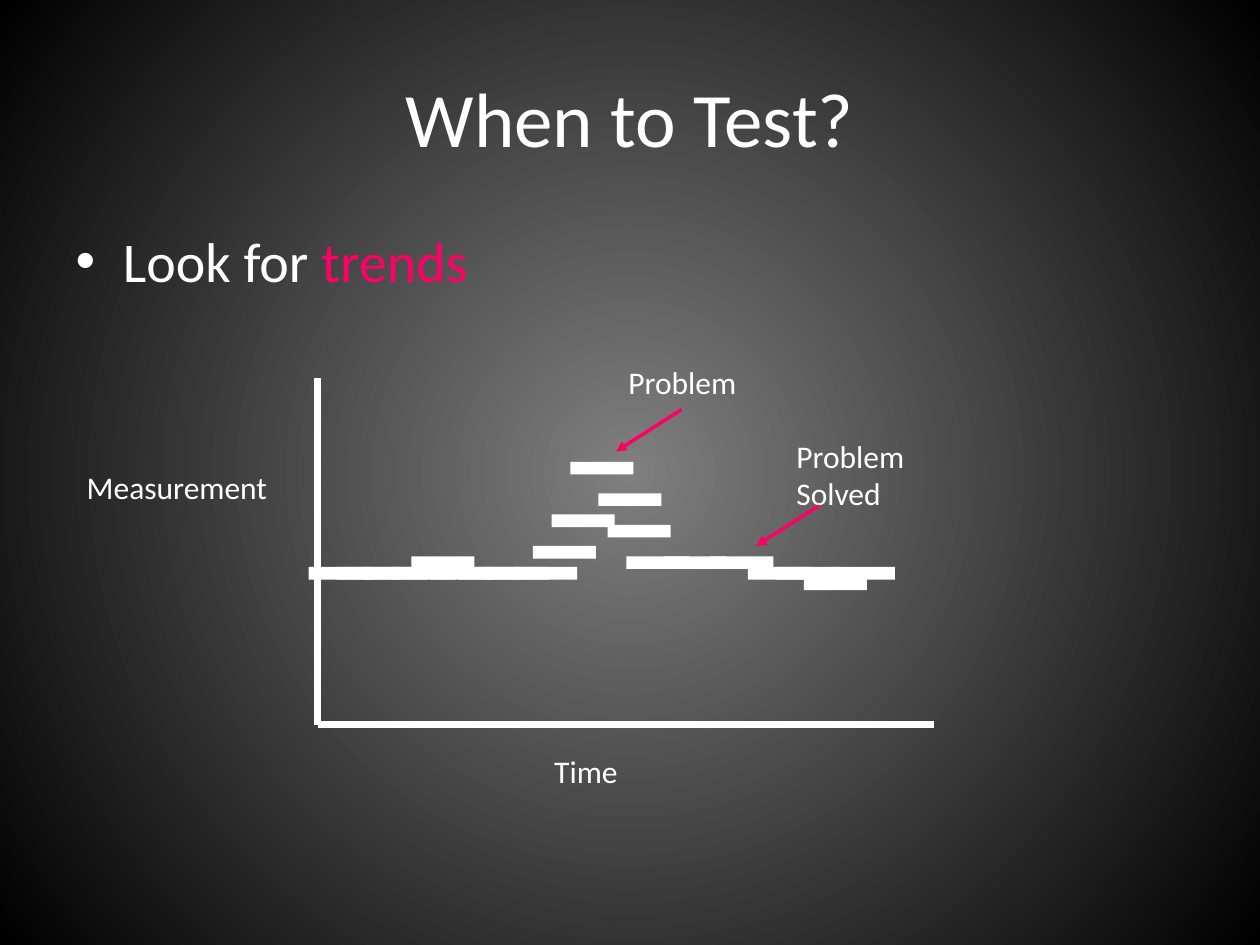
from pptx import Presentation, util as u
from pptx.dml.color import RGBColor
from pptx.enum import shapes, text
from pptx.oxml import parse_xml
from pptx.oxml.ns import nsdecls, qn

WHITE, PINK = "FFFFFF", "FF0066"
# Each bar is (step along time, level above the baseline).
BARS = [(0, 0), (3, 0), (6, 0), (9, 0), (11, 1), (13, 0), (16, 0), (19, 0),
        (22, 0), (24, 2), (26, 5), (28, 10), (31, 7), (32, 4), (34, 1),
        (38, 1), (43, 1), (47, 0), (50, 0), (53, -1), (56, 0)]


def tint(code):
    return RGBColor.from_string(code)


def node(xml):
    """Build one empty DrawingML element from its tag and attributes."""
    tag, _, rest = xml.partition(" ")
    return parse_xml(f"<{tag} {nsdecls('a')} {rest}/>")


def apply(item, values):
    for name, value in values.items():
        setattr(item, name, value)


class Deck:
    font = "Calibri"

    def __init__(self, wide, high):
        self.prs = Presentation()
        apply(self.prs, {"slide_width": u.Pt(wide), "slide_height": u.Pt(high)})
        self.slide = self.prs.slides.add_slide(self.prs.slide_layouts[1])

    def glow(self, inner, outer):
        """Fill the background with a gradient that spreads from the centre."""
        fill = self.slide.background.fill
        fill.gradient()
        for stop, code, place in zip(fill.gradient_stops, (inner, outer), (0, 1)):
            stop.color.rgb = tint(code)
            stop.position = place
        line = next(self.slide.element.iter(qn("a:lin")))
        ring = node('a:path path="circle"')
        ring.append(node('a:fillToRect l="50000" t="50000" r="50000" b="50000"'))
        line.getparent().replace(line, ring)

    def add_run(self, par, words, size, code=WHITE):
        run = par.add_run()
        run.text = words
        apply(run.font, {"name": self.font, "size": u.Pt(size)})
        run.font.color.rgb = tint(code)

    def holder(self, index, box, runs, size, anchor):
        shape = self.slide.placeholders[index]
        names = ("left", "top", "width", "height")
        apply(shape, dict(zip(names, map(u.Pt, box))))
        shape.text_frame.vertical_anchor = anchor
        for words, code in runs:
            self.add_run(shape.text_frame.paragraphs[0], words, size, code)

    def label(self, words, left, top, wide, high=28.8):
        box = self.slide.shapes.add_textbox(*map(u.Pt, (left, top, wide, high)))
        apply(box.text_frame, {"word_wrap": True,
                               "auto_size": text.MSO_AUTO_SIZE.SHAPE_TO_FIT_TEXT})
        self.add_run(box.text_frame.paragraphs[0], words, 18)

    def bar(self, left, top, wide=36, high=7.2):
        rect = self.slide.shapes.add_shape(
            shapes.MSO_SHAPE.RECTANGLE, *map(u.Pt, (left, top, wide, high)))
        rect.shadow.inherit = False
        rect.fill.solid()
        rect.fill.fore_color.rgb = tint(WHITE)
        rect.line.fill.background()

    def line(self, start, end, code=WHITE, width=4, arrow=False):
        link = self.slide.shapes.add_connector(
            shapes.MSO_CONNECTOR.STRAIGHT, *map(u.Pt, start + end))
        link.line.color.rgb = tint(code)
        link.line.width = u.Pt(width)
        props = link.element.spPr
        if arrow:
            props.find(qn("a:ln")).append(node('a:tailEnd type="triangle"'))
        props.append(node("a:effectLst"))


def main():
    deck = Deck(720, 540)
    deck.glow("7F7F7F", "000000")
    deck.holder(0, (36, 21.6, 648, 90), [("When to Test?", WHITE)], 44,
                text.MSO_ANCHOR.MIDDLE)
    deck.holder(1, (36, 126, 648, 356.4),
                [("Look for ", WHITE), ("trends", PINK)], 32, text.MSO_ANCHOR.TOP)

    base = (181.5, 414)
    deck.line((181.5, 216), base)
    deck.line(base, (533.5, 414))
    deck.label("Time", 309.6, 426.2, 97.2)
    deck.label("Measurement", 42.5, 264.2, 139)

    for step, level in BARS:
        deck.bar(176.4 + 5.34 * step, 324 - 6 * level)

    for left, top in ((352, 234), (432, 288)):
        deck.line((left + 37.5, top), (left, top + 24), PINK, 2, arrow=True)
    deck.label("Problem", 352, 204, 115.2)
    deck.label("Problem Solved", 448, 246, 115.2, 51)

    deck.prs.save("out.pptx")


if __name__ == "__main__":
    main()
